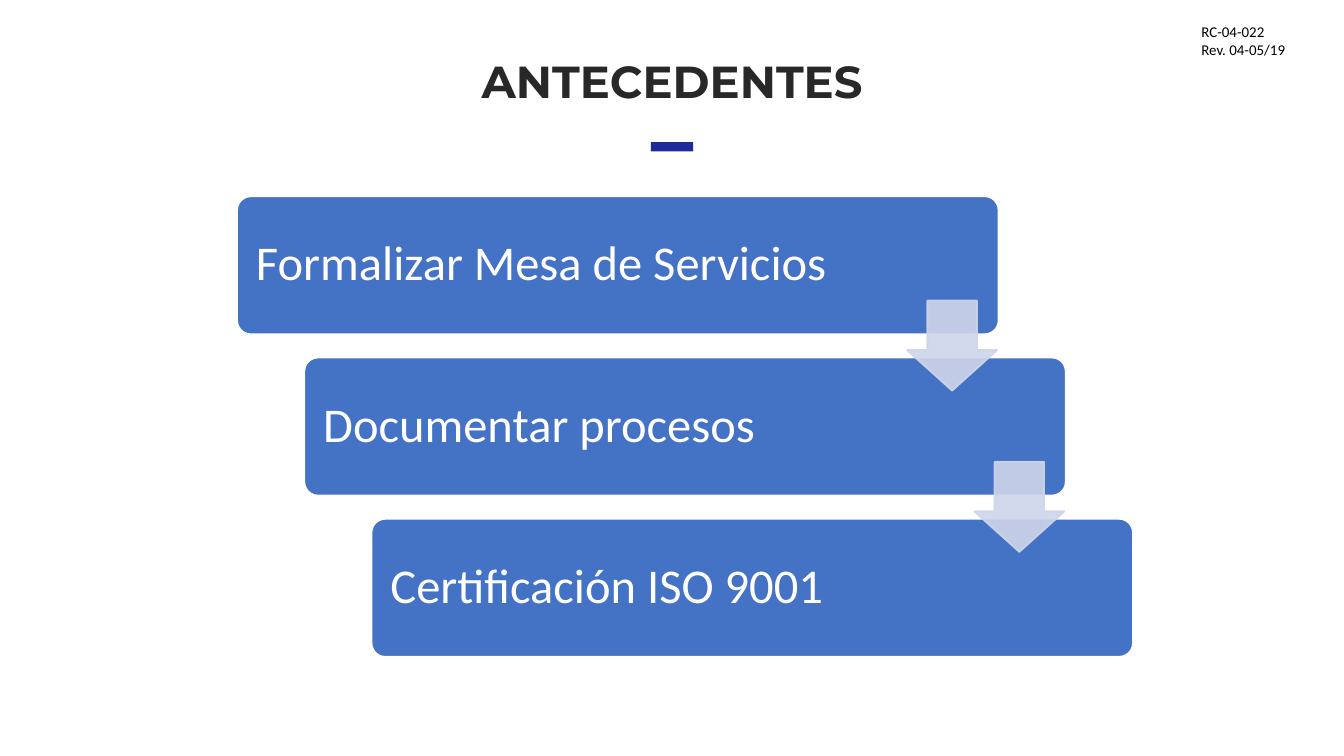
from lxml import etree
from pptx import Presentation
from pptx.dml.color import RGBColor
from pptx.enum import shapes, text
from pptx.oxml.ns import qn
from pptx.util import Pt

WHITE = RGBColor(0xFF, 0xFF, 0xFF)
BLACK = RGBColor(0, 0, 0)
TITLE_GRAY = RGBColor(0x28, 0x28, 0x28)
ACCENT = RGBColor(0x1E, 0x29, 0x9A)
STEP_BLUE = RGBColor(0x44, 0x72, 0xC4)
ARROW_BLUE = RGBColor(0xCF, 0xD5, 0xEA)

STEPS = ["Formalizar Mesa de Servicios", "Documentar procesos", "Certificación ISO 9001"]
STEP_LEFT, STEP_TOP = 127, 105.1
STEP_WIDTH, STEP_HEIGHT = 408, 74
SHIFT_X, SHIFT_Y = 36, 86.4
ARROW_SIZE, ARROW_DX, ARROW_DY = 48.2, 359, 56


def write(frame, lines, font, **paragraph_format):
    frame.word_wrap = True
    for i, line in enumerate(lines):
        paragraph = frame.paragraphs[0] if i == 0 else frame.add_paragraph()
        for name, value in paragraph_format.items():
            setattr(paragraph, name, value)
        run = paragraph.add_run()
        run.text = line
        run.font.color.rgb = font["color"]
        for name in ("name", "size", "bold"):
            setattr(run.font, name, font.get(name))


def add_label(slide, box, lines, font, **paragraph_format):
    label = slide.shapes.add_textbox(*map(Pt, box))
    write(label.text_frame, lines, font, **paragraph_format)


def add_block(slide, kind, box, fill, line=None, adjustments=()):
    block = slide.shapes.add_shape(kind, *map(Pt, box))
    block.shadow.inherit = False
    block.fill.solid()
    block.fill.fore_color.rgb = fill
    if line is None:
        block.line.fill.background()
    else:
        block.line.color.rgb = line
        block.line.width = Pt(1)
    for i, value in enumerate(adjustments):
        block.adjustments[i] = value
    return block


def add_step(slide, left, top, wording):
    step = add_block(slide, shapes.MSO_SHAPE.ROUNDED_RECTANGLE,
                     (left, top, STEP_WIDTH, STEP_HEIGHT), STEP_BLUE, WHITE, [0.1])
    frame = step.text_frame
    for side in ("left", "top", "right", "bottom"):
        setattr(frame, f"margin_{side}", Pt(8))
    frame.vertical_anchor = text.MSO_ANCHOR.MIDDLE
    write(frame, [wording], {"name": "Calibri", "size": Pt(26), "color": WHITE},
          alignment=text.PP_ALIGN.LEFT, line_spacing=0.9)


def add_arrow(slide, left, top):
    """Add a down arrow whose fill and line are 90% opaque."""
    arrow = add_block(slide, shapes.MSO_SHAPE.DOWN_ARROW,
                      (left, top, ARROW_SIZE, ARROW_SIZE), ARROW_BLUE, ARROW_BLUE, [0.55, 0.45])
    for color in arrow.element.spPr.iter(qn("a:srgbClr")):
        etree.SubElement(color, qn("a:alpha")).set("val", "90000")


def main():
    deck = Presentation()
    deck.slide_width, deck.slide_height = Pt(720), Pt(405)
    slide = deck.slides.add_slide(deck.slide_layouts[6])

    add_block(slide, shapes.MSO_SHAPE.RECTANGLE, (348.7, 76.2, 22.6, 5), ACCENT)
    add_label(slide, (636.5, 8.6, 75.6, 26.6), ["RC-04-022", "Rev. 04-05/19"],
              {"name": "Calibri", "size": Pt(8), "color": BLACK})
    add_label(slide, (33.5, 28.3, 653, 41.8), ["ANTECEDENTES"],
              {"name": "Montserrat", "size": Pt(24), "bold": True, "color": TITLE_GRAY},
              alignment=text.PP_ALIGN.CENTER, line_spacing=0.9)

    corners = [(STEP_LEFT + i * SHIFT_X, STEP_TOP + i * SHIFT_Y) for i in range(len(STEPS))]
    for (left, top), wording in zip(corners, STEPS):
        add_step(slide, left, top, wording)
    for left, top in corners[:-1]:
        add_arrow(slide, left + ARROW_DX, top + ARROW_DY)

    deck.save("out.pptx")


if __name__ == "__main__":
    main()
